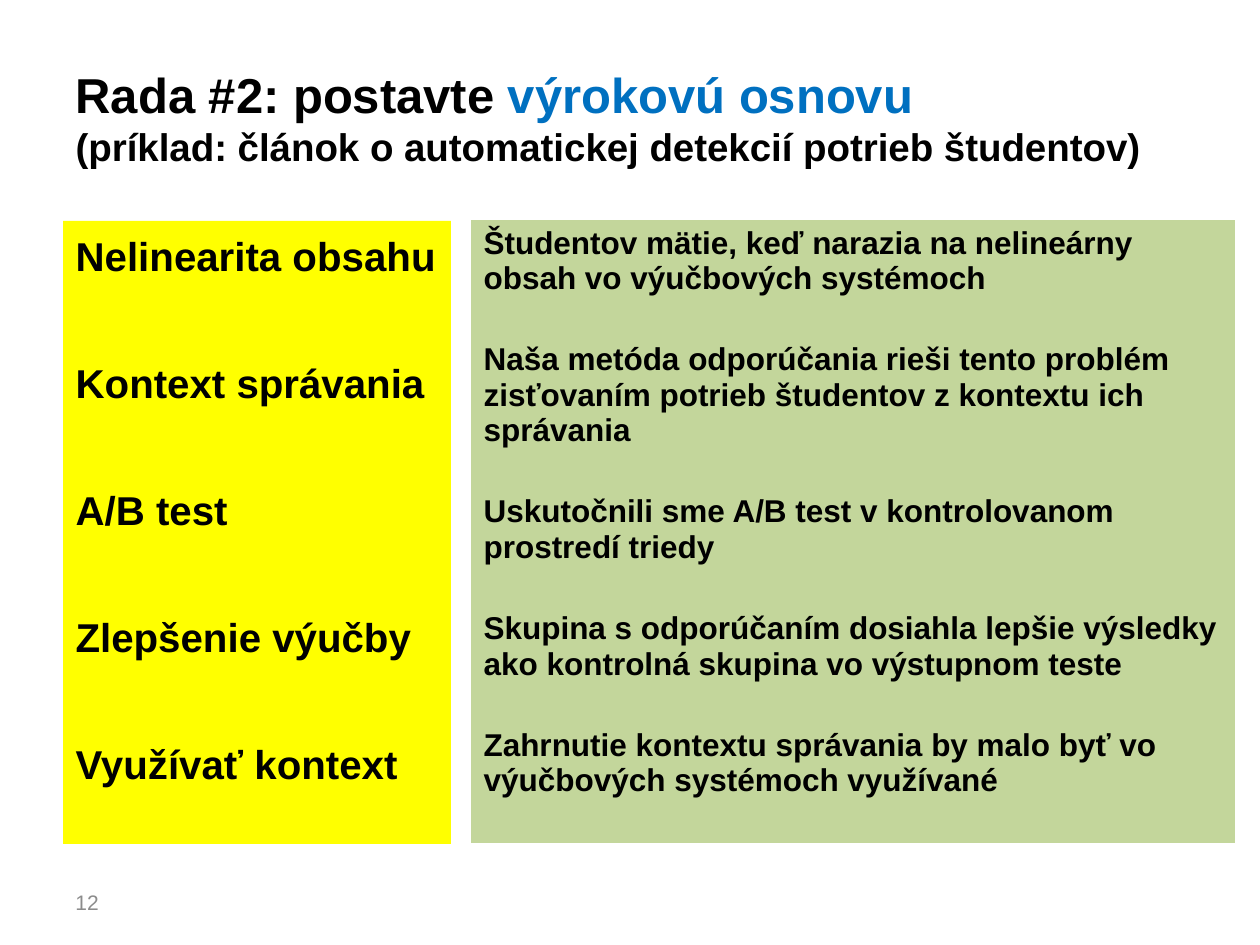
from lxml.etree import SubElement
from pptx import Presentation
from pptx.dml.color import RGBColor
from pptx.enum.text import MSO_ANCHOR as Anchor, MSO_AUTO_SIZE as AutoSize, PP_ALIGN as Align
from pptx.oxml.ns import qn
from pptx.util import Emu, Pt

SCALE = 914400 / 126
FONT = "Arial"
BLACK = RGBColor(0x00, 0x00, 0x00)
BLUE = RGBColor(0x00, 0x70, 0xC0)
GREY = RGBColor(0x8C, 0x8C, 0x8C)
YELLOW = RGBColor(0xFF, 0xFF, 0x00)
GREEN = RGBColor(0xC3, 0xD6, 0x9B)

KEYWORDS = [
    "Nelinearita obsahu",
    "Kontext správania",
    "A/B test",
    "Zlepšenie výučby",
    "Využívať kontext",
]
STATEMENTS = [
    "Študentov mätie, keď narazia na nelineárny obsah vo výučbových systémoch",
    "Naša metóda odporúčania rieši tento problém zisťovaním potrieb študentov z kontextu ich správania",
    "Uskutočnili sme A/B test v kontrolovanom prostredí triedy",
    "Skupina s odporúčaním dosiahla lepšie výsledky ako kontrolná skupina vo výstupnom teste",
    "Zahrnutie kontextu správania by malo byť vo výučbových systémoch využívané",
]


def px(value):
    return Emu(round(value * SCALE))


def place(shape, left, top, width, height):
    shape.left, shape.top = px(left), px(top)
    shape.width, shape.height = px(width), px(height)


def set_font(font, size, color, bold=True):
    font.name, font.size, font.bold = FONT, Pt(size), bold
    font.color.rgb = color


def remove_bullet(paragraph):
    properties = paragraph._p.get_or_add_pPr()
    properties.set("marL", "0")
    properties.set("indent", "0")
    SubElement(properties, qn("a:buNone"))


def fill_title(title):
    place(title, 63, 38, 1134, 158)
    frame = title.text_frame
    frame.auto_size = AutoSize.NONE
    frame.vertical_anchor = Anchor.MIDDLE
    paragraph = frame.paragraphs[0]
    paragraph.alignment = Align.LEFT
    for text, size, color in [
        ("Rada #2: postavte ", 28, BLACK),
        ("výrokovú osnovu", 28, BLUE),
        ("(príklad: článok o automatickej detekcií potrieb študentov)", 22, BLACK),
    ]:
        if size == 22:
            paragraph.add_line_break()
        run = paragraph.add_run()
        run.text = text
        set_font(run.font, size, color)


def fill_panel(panel, box, color, items, size, gap, line_spacing, inset):
    place(panel, *box)
    panel.fill.solid()
    panel.fill.fore_color.rgb = color
    frame = panel.text_frame
    frame.auto_size = AutoSize.NONE
    frame.vertical_anchor = Anchor.TOP
    frame.margin_top = px(inset)
    for index, item in enumerate(items):
        paragraph = frame.add_paragraph() if index else frame.paragraphs[0]
        paragraph.text = item
        paragraph.line_spacing = line_spacing
        paragraph.space_before = Pt(gap if index else 0)
        remove_bullet(paragraph)
        set_font(paragraph.font, size, BLACK)


def add_page_number(slide, number):
    box = slide.shapes.add_textbox(px(63), px(877), px(294), px(50))
    frame = box.text_frame
    frame.word_wrap = True
    frame.vertical_anchor = Anchor.MIDDLE
    paragraph = frame.paragraphs[0]
    paragraph.text = number
    set_font(paragraph.font, 12, GREY, bold=False)


def main():
    presentation = Presentation()
    presentation.slide_width, presentation.slide_height = px(1260), px(945)
    slide = presentation.slides.add_slide(presentation.slide_layouts[3])
    title, keywords, statements = slide.placeholders
    fill_title(title)
    add_page_number(slide, "12")
    fill_panel(keywords, (63, 221, 388, 623), YELLOW, KEYWORDS, 23, 45, 1.0, 10)
    fill_panel(statements, (471, 220, 764, 623), GREEN, STATEMENTS, 18, 26, 0.94, 6)
    presentation.save("out.pptx")


if __name__ == "__main__":
    main()
